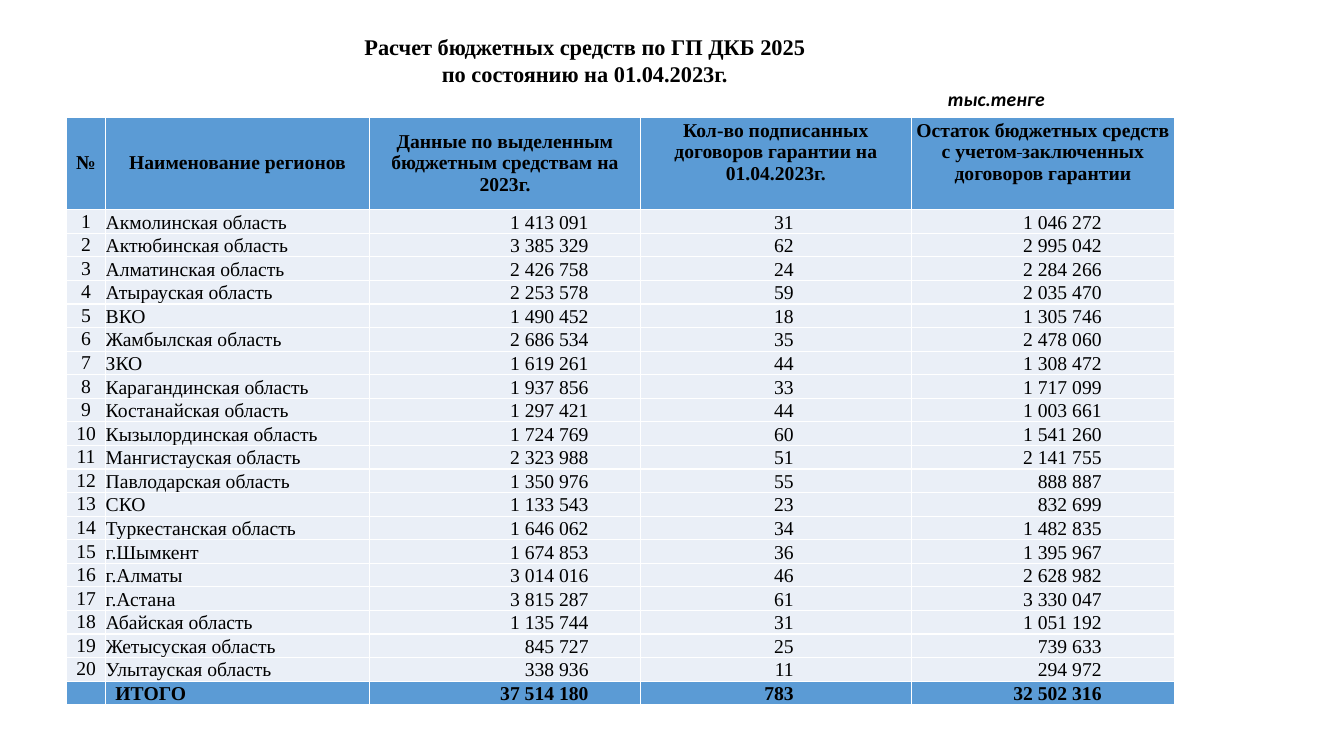
from dataclasses import dataclass

from lxml.etree import SubElement
from pptx import Presentation
from pptx.dml.color import RGBColor
from pptx.enum.text import MSO_ANCHOR, MSO_AUTO_SIZE, PP_ALIGN
from pptx.oxml.ns import qn
from pptx.util import Pt


@dataclass(frozen=True)
class Theme:
    ink: str = "000000"
    accent: str = "5B9BD5"
    band: str = "EAEFF7"
    border: str = "FFFFFF"
    serif: str = "Times New Roman"
    sans: str = "Calibri"
    title_size: int = 16
    table_size: int = 14


def apply(target, values):
    for name, value in values.items():
        setattr(target, name, value)


class BudgetSlide:
    def __init__(self, presentation, theme):
        self.theme = theme
        self.slide = presentation.slides.add_slide(presentation.slide_layouts[6])

    def add_text(self, paragraph, text, size, alignment=PP_ALIGN.LEFT, **font):
        paragraph.alignment = alignment
        if not text:
            SubElement(paragraph._p, qn("a:endParaRPr"), sz=str(size * 100))
            return
        for index, part in enumerate(text.split("~")):
            if index:
                self.add_run(paragraph, " ", size, font).set("strike", "sngStrike")
            for number, line in enumerate(part.split("\n")):
                if number:
                    paragraph.add_line_break()
                self.add_run(paragraph, line, size, font)

    def add_run(self, paragraph, text, size, font):
        run = paragraph.add_run()
        run.text = text
        apply(run.font, {"size": Pt(size), "name": self.theme.serif, **font})
        run.font.color.rgb = RGBColor.from_string(self.theme.ink)
        return run._r.get_or_add_rPr()

    def heading(self, left, top, width, height, title, unit, unit_indent):
        frame = self.slide.shapes.add_textbox(Pt(left), Pt(top), Pt(width), Pt(height)).text_frame
        apply(frame, {"word_wrap": True, "auto_size": MSO_AUTO_SIZE.NONE})
        self.add_text(frame.paragraphs[0], title, self.theme.title_size, PP_ALIGN.CENTER, bold=True)
        unit_line = frame.add_paragraph()
        unit_line._p.get_or_add_pPr().set("marL", str(Pt(unit_indent)))
        self.add_text(unit_line, unit, self.theme.table_size, name=self.theme.sans, bold=True, italic=True)

    def cell(self, cell, text, fill, alignment, anchor, bold=False, left=0, right=0, bottom=0):
        apply(cell, {
            "margin_left": Pt(left), "margin_right": Pt(right),
            "margin_top": 0, "margin_bottom": Pt(bottom), "vertical_anchor": anchor,
        })
        self.add_text(cell.text_frame.paragraphs[0], text, self.theme.table_size, alignment, bold=bold)
        properties = cell._tc.get_or_add_tcPr()
        for side in ("a:lnL", "a:lnR", "a:lnT", "a:lnB"):
            line = SubElement(properties, qn(side), w=str(Pt(1)))
            SubElement(SubElement(line, qn("a:solidFill")), qn("a:srgbClr"), val=self.theme.border)
        cell.fill.solid()
        cell.fill.fore_color.rgb = RGBColor.from_string(fill)

    def table(self, left, top, widths, header_height, row_height, headers, regions, total):
        heights = [header_height] + [row_height] * (len(regions) + 1)
        table = self.slide.shapes.add_table(
            len(heights), len(widths), Pt(left), Pt(top), Pt(sum(widths)), Pt(sum(heights))).table
        for column, width in zip(table.columns, widths):
            column.width = Pt(width)
        for row, height in zip(table.rows, heights):
            row.height = Pt(height)
        for column, (text, bottom) in enumerate(headers):
            self.cell(table.cell(0, column), text, self.theme.accent,
                      PP_ALIGN.CENTER, MSO_ANCHOR.MIDDLE, True, bottom=bottom)
        rows = [(str(number), *region) for number, region in enumerate(regions, 1)]
        for row, values in enumerate(rows + [("", *total)], 1):
            is_total = row > len(regions)
            fill = self.theme.accent if is_total else self.theme.band
            formats = [
                (PP_ALIGN.CENTER, MSO_ANCHOR.MIDDLE, {}),
                (PP_ALIGN.LEFT, MSO_ANCHOR.BOTTOM, {"left": 7 if is_total else 0}),
                *[(PP_ALIGN.RIGHT, MSO_ANCHOR.BOTTOM, {"right": right}) for right in (37, 84, 52)],
            ]
            for column, (text, (alignment, anchor, margins)) in enumerate(zip(values, formats)):
                self.cell(table.cell(row, column), text, fill, alignment, anchor, is_total, **margins)


HEADERS = [
    ("№", 0),
    ("Наименование регионов", 0),
    ("Данные по выделенным бюджетным средствам на 2023г.", 0),
    ("Кол-во подписанных договоров гарантии на 01.04.2023г.", 16),
    ("Остаток бюджетных средств с учетом~заключенных договоров гарантии", 16),
]
REGIONS = [
    ("Акмолинская область", "1 413 091", "31", "1 046 272"),
    ("Актюбинская область", "3 385 329", "62", "2 995 042"),
    ("Алматинская область", "2 426 758", "24", "2 284 266"),
    ("Атырауская область", "2 253 578", "59", "2 035 470"),
    ("ВКО", "1 490 452", "18", "1 305 746"),
    ("Жамбылская область", "2 686 534", "35", "2 478 060"),
    ("ЗКО", "1 619 261", "44", "1 308 472"),
    ("Карагандинская область", "1 937 856", "33", "1 717 099"),
    ("Костанайская область", "1 297 421", "44", "1 003 661"),
    ("Кызылординская область", "1 724 769", "60", "1 541 260"),
    ("Мангистауская область", "2 323 988", "51", "2 141 755"),
    ("Павлодарская область", "1 350 976", "55", "888 887"),
    ("СКО", "1 133 543", "23", "832 699"),
    ("Туркестанская область", "1 646 062", "34", "1 482 835"),
    ("г.Шымкент", "1 674 853", "36", "1 395 967"),
    ("г.Алматы", "3 014 016", "46", "2 628 982"),
    ("г.Астана", "3 815 287", "61", "3 330 047"),
    ("Абайская область", "1 135 744", "31", "1 051 192"),
    ("Жетысуская область", "845 727", "25", "739 633"),
    ("Улытауская область", "338 936", "11", "294 972"),
]
TOTAL = ("ИТОГО", "37 514 180", "783", "32 502 316")


def main():
    presentation = Presentation()
    apply(presentation, {"slide_width": Pt(960), "slide_height": Pt(540)})
    budget = BudgetSlide(presentation, Theme())
    budget.heading(30, 20, 775.5, 80, "Расчет бюджетных средств по ГП ДКБ 2025\nпо состоянию на 01.04.2023г.",
                   "тыс.тенге", 640)
    budget.table(47.5, 83.5, [28, 188.5, 193.5, 193.5, 188], 66.3, 16.84, HEADERS, REGIONS, TOTAL)
    presentation.save("out.pptx")


if __name__ == "__main__":
    main()
